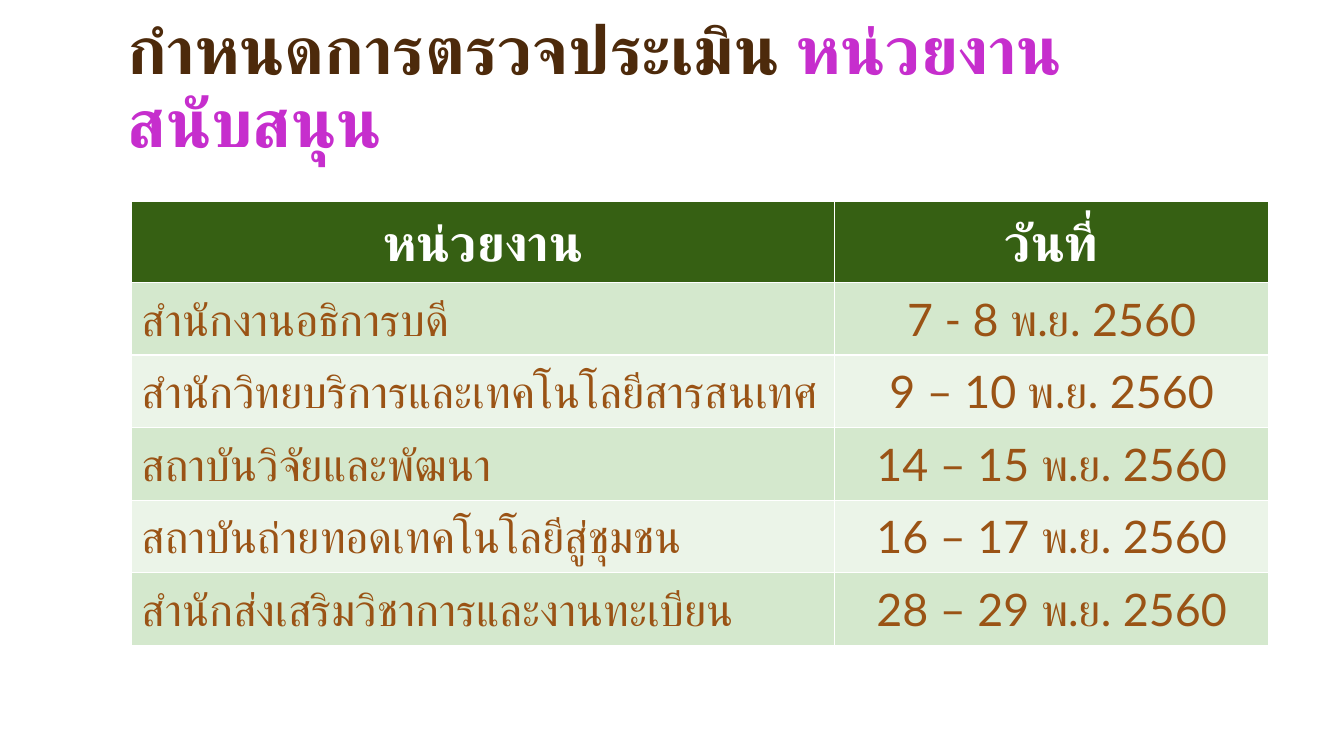
from dataclasses import dataclass

from lxml.etree import SubElement
from pptx import Presentation
from pptx.dml.color import RGBColor
from pptx.enum.text import MSO_ANCHOR, MSO_AUTO_SIZE, PP_ALIGN
from pptx.oxml.ns import qn
from pptx.util import Inches, Pt

BROWN = RGBColor(0x4D, 0x2A, 0x0B)
PINK = RGBColor(0xC6, 0x2E, 0xCD)
WHITE = RGBColor(0xFF, 0xFF, 0xFF)
RUST = RGBColor(0x9A, 0x53, 0x15)
GREEN = RGBColor(0x36, 0x60, 0x13)
MINT = RGBColor(0xD4, 0xE8, 0xCD)
PALE = RGBColor(0xEB, 0xF4, 0xE8)
FACE = "Lato"
WIDE, HIGH = Inches(13.33), Inches(7.5)
COLS = (6.97, 4.31)
HEAD, STEP = 0.8, 0.72


@dataclass(frozen=True)
class Look:
    size: int
    color: RGBColor
    bold: bool


@dataclass(frozen=True)
class Visit:
    unit: str
    date: str


VISITS = [
    Visit("หน่วยงาน", "วันที่"),
    Visit("สำนักงานอธิการบดี", "7 - 8 พ.ย. 2560"),
    Visit("สำนักวิทยบริการและเทคโนโลยีสารสนเทศ", "9 – 10 พ.ย. 2560"),
    Visit("สถาบันวิจัยและพัฒนา", "14 – 15 พ.ย. 2560"),
    Visit("สถาบันถ่ายทอดเทคโนโลยีสู่ชุมชน", "16 – 17 พ.ย. 2560"),
    Visit("สำนักส่งเสริมวิชาการและงานทะเบียน", "28 – 29 พ.ย. 2560"),
]


def style(run, look: Look) -> None:
    font = run.font
    font.name, font.size, font.bold = FACE, Pt(look.size), look.bold
    font.color.rgb = look.color
    SubElement(run._r.get_or_add_rPr(), qn("a:cs"), typeface=FACE)


def add_title(slide) -> None:
    title = slide.shapes.title
    title.left, title.top = int(WIDE * 0.087), int(HIGH * 0.044)
    title.width, title.height = int(WIDE * 0.825), int(HIGH * 0.177)
    frame = title.text_frame
    frame.word_wrap = True
    frame.auto_size = MSO_AUTO_SIZE.NONE
    frame.vertical_anchor = MSO_ANCHOR.BOTTOM
    para = frame.paragraphs[0]
    para.alignment = PP_ALIGN.LEFT
    para.line_spacing = 0.9
    for text, color in (("กำหนดการตรวจประเมิน ", BROWN), ("หน่วยงานสนับสนุน", PINK)):
        run = para.add_run()
        run.text = text
        style(run, Look(48, color, True))


def fill_cell(cell, text: str, row: int, mid: bool) -> None:
    cell.fill.solid()
    cell.fill.fore_color.rgb = GREEN if row == 0 else MINT if row % 2 else PALE
    cell.vertical_anchor = MSO_ANCHOR.MIDDLE
    para = cell.text_frame.paragraphs[0]
    para.text = text
    para.alignment = PP_ALIGN.CENTER if mid else PP_ALIGN.LEFT
    style(para.runs[0], Look(32, RUST, False) if row else Look(36, WHITE, True))


def add_grid(slide) -> None:
    tall = HEAD + STEP * (len(VISITS) - 1)
    table = slide.shapes.add_table(
        len(VISITS), len(COLS), int(WIDE * 0.098), int(HIGH * 0.267),
        Inches(sum(COLS)), Inches(tall),
    ).table
    for col, width in zip(table.columns, COLS):
        col.width = Inches(width)
    for row, visit in enumerate(VISITS):
        table.rows[row].height = Inches(STEP if row else HEAD)
        fill_cell(table.cell(row, 0), visit.unit, row, row == 0)
        fill_cell(table.cell(row, 1), visit.date, row, True)


def main() -> None:
    deck = Presentation()
    deck.slide_width, deck.slide_height = WIDE, HIGH
    slide = deck.slides.add_slide(deck.slide_layouts[5])
    add_title(slide)
    add_grid(slide)
    deck.save("out.pptx")


if __name__ == "__main__":
    main()
